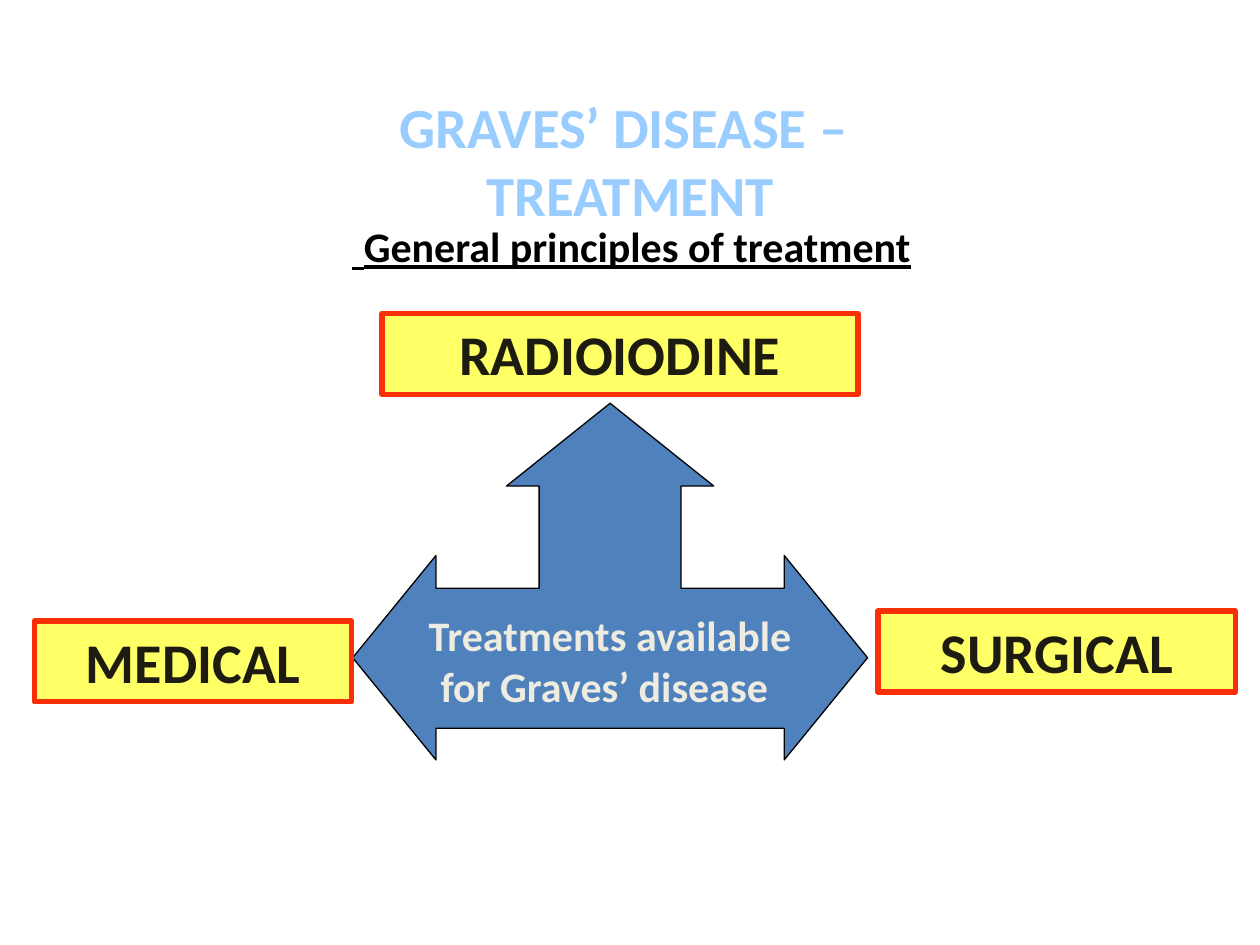
from dataclasses import dataclass

from pptx import Presentation
from pptx.dml.color import RGBColor
from pptx.enum.shapes import MSO_SHAPE
from pptx.enum.text import MSO_ANCHOR, MSO_AUTO_SIZE, PP_ALIGN
from pptx.util import Cm, Pt


@dataclass(frozen=True)
class Theme:
    face: str = "Calibri"
    title: str = "99CCFF"
    black: str = "000000"
    blue: str = "4F81BD"
    cream: str = "EEECE1"
    yellow: str = "FFFF66"
    red: str = "F92F07"
    dark: str = "1E1C11"
    head: float = 32.4
    label: float = 32
    body: float = 24


theme = Theme()


def write(shape, lines, size, color, line=False, **frame):
    text = shape.text_frame
    for name, value in frame.items():
        setattr(text, name, value)
    text.text = "\n".join(lines)
    style = {"name": theme.face, "size": Pt(size), "bold": True, "underline": line}
    for part in text.paragraphs:
        part.alignment = PP_ALIGN.CENTER
        part._p.get_or_add_pPr().set("rtl", "1")
        for run in part.runs:
            for name, value in style.items():
                setattr(run.font, name, value)
            run.font.color.rgb = RGBColor.from_string(color)


def paint(shape, fill, edge, width):
    shape.shadow.inherit = False
    shape.fill.solid()
    shape.fill.fore_color.rgb = RGBColor.from_string(fill)
    shape.line.color.rgb = RGBColor.from_string(edge)
    shape.line.width = Pt(width)


deck = Presentation()
deck.slide_width, deck.slide_height = Cm(25.4), Cm(19.05)
slide = deck.slides.add_slide(deck.slide_layouts[5])
shapes = slide.shapes

title = shapes.title
place = {"left": Cm(1.27), "top": Cm(1.73), "width": Cm(22.86), "height": Cm(2.97)}
for name, value in place.items():
    setattr(title, name, value)
write(title, ["GRAVES’ DISEASE – \vTREATMENT"], theme.head, theme.title,
      vertical_anchor=MSO_ANCHOR.MIDDLE, word_wrap=True, auto_size=MSO_AUTO_SIZE.NONE)

topic = shapes.add_textbox(Cm(1.3), Cm(4.32), Cm(22.86), Cm(2.29))
write(topic, ["General principles of treatment "], theme.body, theme.black,
      line=True, word_wrap=True)

mid = 12.3
half = [(10.21, 9.8), (10.87, 9.8), (10.87, 11.86), (8.79, 11.86),
        (8.79, 11.2), (7.11, 13.26), (8.79, 15.32), (8.79, 14.68)]
other = [(2 * mid - x, y) for x, y in reversed(half)]
pen = shapes.build_freeform(Cm(mid), Cm(8.13))
pen.add_line_segments([(Cm(x), Cm(y)) for x, y in half + other], close=True)
arrow = pen.convert_to_shape()
paint(arrow, theme.blue, theme.black, 0.75)
write(arrow, ["Treatments available", " for Graves’ disease"], theme.body, theme.cream,
      vertical_anchor=MSO_ANCHOR.MIDDLE, word_wrap=False, margin_top=Cm(3.3))

boxes = [("MEDICAL", 0.69, 12.52, 6.4),
         ("SURGICAL", 17.7, 12.32, 7.21),
         ("RADIOIODINE", 7.7, 6.32, 9.6)]
for label, left, top, width in boxes:
    box = shapes.add_shape(MSO_SHAPE.RECTANGLE, Cm(left), Cm(top), Cm(width), Cm(1.63))
    paint(box, theme.yellow, theme.red, 3)
    write(box, [label], theme.label, theme.dark, vertical_anchor=MSO_ANCHOR.TOP,
          word_wrap=True, auto_size=MSO_AUTO_SIZE.SHAPE_TO_FIT_TEXT)

deck.save("out.pptx")
